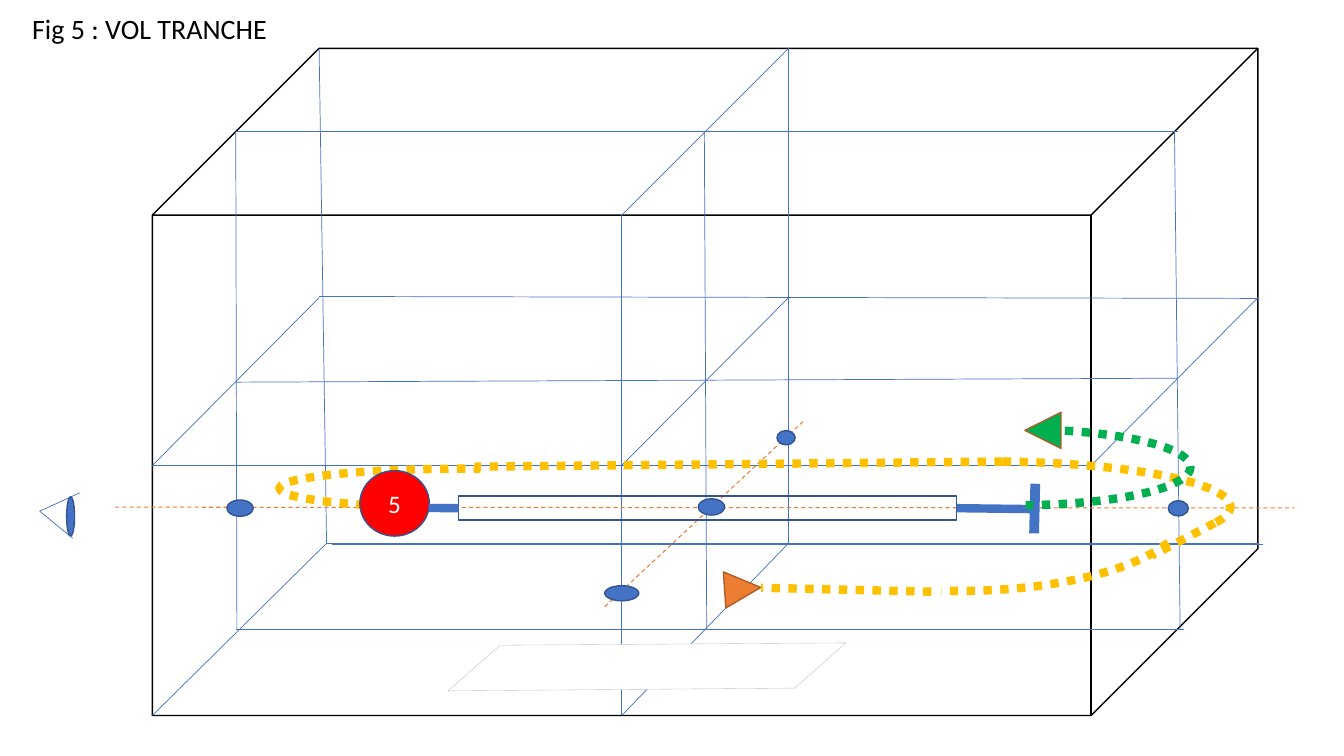
from dataclasses import dataclass

from lxml.etree import SubElement
from pptx import Presentation
from pptx.dml.color import RGBColor
from pptx.enum.dml import MSO_LINE_DASH_STYLE as Dash
from pptx.enum.shapes import MSO_CONNECTOR as Connector, MSO_SHAPE as Shape
from pptx.enum.text import MSO_ANCHOR as Anchor, PP_ALIGN as Align
from pptx.oxml.ns import qn
from pptx.util import Cm, Pt


@dataclass(frozen=True)
class Theme:
    font: str = "Calibri"
    title_size: float = 20
    label_size: float = 18
    thin: float = 0.5
    outline: float = 1
    track: float = 6
    black: str = "000000"
    white: str = "FFFFFF"
    blue: str = "4472C4"
    dark_blue: str = "325491"
    orange: str = "ED7D31"
    brown: str = "AF5C24"
    yellow: str = "FFC000"
    green: str = "00B050"
    red: str = "FF0000"
    grey: str = "BFBFBF"


THEME = Theme()

# Corners of the flight box, in centimetres
TOP, WIDTH, HEIGHT = 1.22, 27.86, 16.81
DEPTH = HEIGHT / 4
FRONT_LEFT, BACK_LEFT = 3.84, 3.84 + DEPTH
BACK_RIGHT = FRONT_LEFT + WIDTH
FRONT_RIGHT = BACK_RIGHT - DEPTH
FRONT_MID = (FRONT_LEFT + FRONT_RIGHT) / 2
BACK_MID = FRONT_MID + DEPTH
FRONT_TOP, FRONT_BOTTOM = TOP + DEPTH, TOP + HEIGHT
BACK_BOTTOM, FLOOR_LEFT = 13.69, 8.23
FRONT_LEVEL, BACK_LEVEL = 11.73, 7.5
SLICE_TOP, SLICE_BOTTOM = TOP + DEPTH / 2, 15.85
SLICE_LEFT, SLICE_RIGHT = FRONT_LEFT + DEPTH / 2, FRONT_RIGHT + DEPTH / 2

BOX_LINES = [
    (BACK_RIGHT, BACK_BOTTOM, FLOOR_LEFT, BACK_BOTTOM),
    (BACK_LEFT, TOP, FLOOR_LEFT, BACK_BOTTOM),
    (FLOOR_LEFT, BACK_BOTTOM, FRONT_LEFT, FRONT_BOTTOM),
    (BACK_MID, TOP, FRONT_MID, FRONT_TOP),
    (FRONT_MID, FRONT_TOP, FRONT_MID, FRONT_BOTTOM),
    (BACK_MID, TOP, BACK_MID, BACK_BOTTOM),
    (FRONT_MID, FRONT_BOTTOM, BACK_MID, BACK_BOTTOM),
    (BACK_RIGHT, 7.52, BACK_RIGHT, 7.59),
    (BACK_RIGHT, 7.52, BACK_LEFT, 7.47),
    (BACK_RIGHT, BACK_LEVEL, FRONT_RIGHT, FRONT_LEVEL),
    (FRONT_RIGHT, FRONT_LEVEL, FRONT_LEFT, FRONT_LEVEL),
    (BACK_LEFT, BACK_LEVEL, FRONT_LEFT, FRONT_LEVEL),
    (BACK_MID, BACK_LEVEL, FRONT_MID, FRONT_LEVEL),
    (29.69, 9.53, SLICE_LEFT, 9.63),
    (17.75, SLICE_TOP, 17.81, SLICE_BOTTOM),
    (SLICE_RIGHT, SLICE_TOP, 29.74, SLICE_BOTTOM),
    (SLICE_LEFT, SLICE_TOP, 5.97, SLICE_BOTTOM),
    (SLICE_LEFT, SLICE_TOP, 29.69, SLICE_TOP),
    (SLICE_LEFT, SLICE_BOTTOM, 29.85, SLICE_BOTTOM),
]
FLOOR_MARK = [(11.29, 17.41), (12.6, 16.26), (21.32, 16.2), (20.03, 17.34)]
AXIS_MARKS = [
    (5.72, 12.6, 0.66, 0.41),
    (17.6, 12.57, 0.66, 0.41),
    (29.44, 12.62, 0.51, 0.38),
    (15.24, 14.76, 0.86, 0.38),
    (19.58, 10.85, 0.46, 0.36),
]


def set_line(line, color, width, dash=None):
    line.color.rgb = RGBColor.from_string(color)
    line.width = Pt(width)
    if dash is not None:
        line.dash_style = dash


def paint(shape, fill, color, width, dash=None):
    shape.shadow.inherit = False
    if fill:
        shape.fill.solid()
        shape.fill.fore_color.rgb = RGBColor.from_string(fill)
    else:
        shape.fill.background()
    set_line(shape.line, color, width, dash)


def add_figure(slide, kind, box, fill, color, rotation=0):
    shape = slide.shapes.add_shape(kind, *map(Cm, box))
    paint(shape, fill, color, THEME.outline)
    shape.rotation = rotation
    return shape


def add_line(slide, ends, color=THEME.blue, width=THEME.thin, dash=None):
    connector = slide.shapes.add_connector(Connector.STRAIGHT, *map(Cm, ends))
    set_line(connector.line, color, width, dash)
    SubElement(connector._element.spPr, qn("a:effectLst"))
    return connector


def add_track_arc(slide, box, start, end, color, rotation=0):
    """Draw a dotted arc, clockwise between two angles given in degrees."""
    arc = slide.shapes.add_shape(Shape.ARC, *map(Cm, box))
    for index, angle in enumerate((start, end)):
        arc.adjustments[index] = angle * 0.6  # 60000 units a degree, over 100000
    arc.rotation = rotation
    paint(arc, None, color, THEME.track, Dash.ROUND_DOT)


def add_track_line(slide, ends):
    add_line(slide, ends, THEME.yellow, THEME.track, Dash.ROUND_DOT)


def write(shape, text, size, color, align):
    frame = shape.text_frame
    frame.word_wrap = True
    frame.vertical_anchor = Anchor.MIDDLE
    frame.text = text
    paragraph = frame.paragraphs[0]
    paragraph.alignment = align
    font = paragraph.runs[0].font
    font.name, font.size = THEME.font, Pt(size)
    font.color.rgb = RGBColor.from_string(color)
    return paragraph


def add_title(slide, text):
    title = slide.shapes.add_textbox(Cm(0.56), Cm(0.3), Cm(6.48), Cm(0.91))
    write(title, text, THEME.title_size, THEME.black, Align.LEFT).line_spacing = 0.9


def add_box(slide):
    add_figure(slide, Shape.CUBE, (FRONT_LEFT, TOP, WIDTH, HEIGHT), None, THEME.black)
    for ends in BOX_LINES:
        add_line(slide, ends)


def add_floor_mark(slide):
    first, *others = [(Cm(x), Cm(y)) for x, y in FLOOR_MARK]
    builder = slide.shapes.build_freeform(*first)
    builder.add_line_segments(others, close=True)
    paint(builder.convert_to_shape(), THEME.white, THEME.grey, 0.25)


def add_axes(slide):
    add_line(slide, (31.83, 13.72, 8.36, 13.72))
    for ends in [(2.9, 12.78, 32.61, 12.8), (15.24, 15.29, 20.27, 10.59)]:
        add_line(slide, ends, THEME.orange, 0.75, Dash.DASH)
    for box in AXIS_MARKS:
        add_figure(slide, Shape.OVAL, box, THEME.blue, THEME.dark_blue)


def add_eye(slide):
    add_line(slide, (1, 12.88, 2.01, 12.42))
    add_line(slide, (1, 12.88, 1.83, 13.56))
    add_figure(slide, Shape.OVAL, (1.68, 12.52, 0.2, 0.99), THEME.blue, THEME.dark_blue)


def add_aircraft(slide):
    add_line(slide, (26.09, 12.19, 26.06, 13.44), width=7)
    nose = add_figure(slide, Shape.OVAL, (9.07, 11.86, 1.75, 1.65),
                      THEME.red, THEME.dark_blue)
    write(nose, "5", THEME.label_size, THEME.white, Align.CENTER)
    wing = add_figure(slide, Shape.RECTANGLE, (11.56, 12.5, 12.55, 0.61),
                      None, THEME.dark_blue)
    front = add_line(slide, (10.8, 12.8, 11.56, 12.8), width=THEME.track)
    front.end_connect(wing, 1)
    tail = add_line(slide, (24.1, 12.8, 26.14, 12.83), width=THEME.track)
    tail.begin_connect(wing, 3)


def main():
    presentation = Presentation()
    presentation.slide_width, presentation.slide_height = Cm(33.87), Cm(19.05)
    slide = presentation.slides.add_slide(presentation.slide_layouts[6])
    add_box(slide)
    add_floor_mark(slide)
    add_axes(slide)
    add_eye(slide)
    add_track_arc(slide, (18.77, 11.63, 12.24, 2.29), 288.44, 4.57, THEME.yellow)
    add_track_arc(slide, (7.04, 11.81, 9.27, 0.99), 350.45, 131.09, THEME.yellow, 180)
    add_track_line(slide, (25.27, 11.63, 11.96, 11.76))
    add_aircraft(slide)
    add_track_arc(slide, (21.39, 10.82, 8.61, 1.91), 307.34, 80.96, THEME.green)
    add_figure(slide, Shape.ISOSCELES_TRIANGLE, (18.26, 14.38, 0.91, 0.91),
               THEME.orange, THEME.brown, 86.1)
    add_figure(slide, Shape.ISOSCELES_TRIANGLE, (25.83, 10.39, 0.91, 0.91),
               THEME.green, THEME.brown, 270)
    add_title(slide, "Fig 5 : VOL TRANCHE")
    add_track_arc(slide, (18.47, 10.8, 11.46, 4.09), 8.97, 103.31, THEME.yellow)
    add_track_line(slide, (23.47, 14.91, 19.18, 14.81))
    add_track_line(slide, (30.61, 13.18, 29.03, 14))
    presentation.save("out.pptx")


if __name__ == "__main__":
    main()
